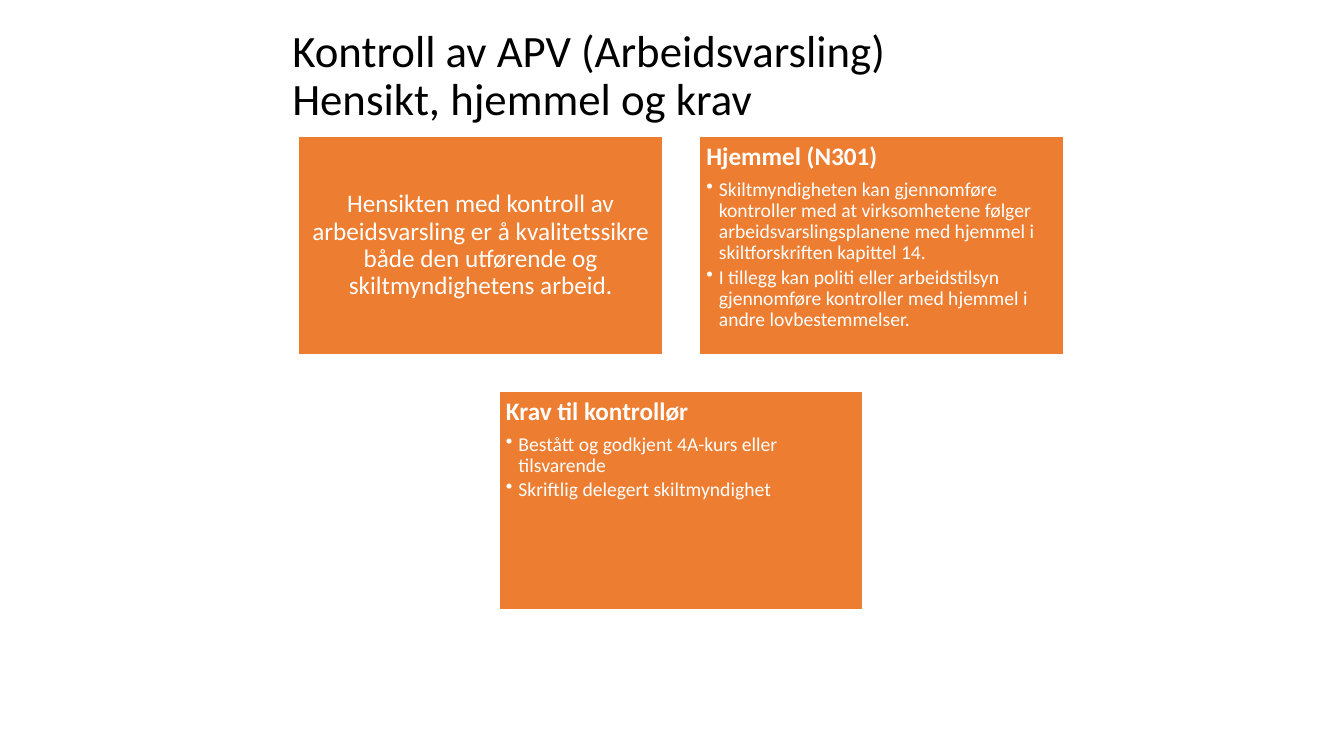
from lxml import etree
from pptx import Presentation
from pptx import util as u
from pptx.dml.color import RGBColor
from pptx.enum import shapes, text
from pptx.oxml import ns

COLORS = {"box": "ED7D31", "light": "FFFFFF", "title": "000000"}


class Deck:
    font = "Calibri"
    inset = 5

    def __init__(self, width, height):
        self.prs = Presentation()
        self.prs.slide_width, self.prs.slide_height = u.Pt(width), u.Pt(height)
        self.s = self.prs.slides.add_slide(self.prs.slide_layouts[5])

    def color(self, name):
        return RGBColor.from_string(COLORS[name])

    def run(self, p, words, size, color="light", bold=False):
        r = p.add_run()
        r.text = words
        r.font.name, r.font.size, r.font.bold = self.font, u.Pt(size), bold
        r.font.color.rgb = self.color(color)

    def paragraph(self, p, align=text.PP_ALIGN.LEFT, after=0):
        p.alignment = align
        p.line_spacing = 0.9
        p.space_before, p.space_after = u.Pt(0), u.Pt(after)

    def title(self, lines, x, y, w, h):
        sp = self.s.shapes.title
        sp.left, sp.top, sp.width, sp.height = map(u.Pt, (x, y, w, h))
        tf = sp.text_frame
        tf.word_wrap = True
        tf.auto_size = text.MSO_AUTO_SIZE.NONE
        tf.vertical_anchor = text.MSO_ANCHOR.MIDDLE
        p = tf.paragraphs[0]
        self.paragraph(p)
        for i, line in enumerate(lines):
            if i:
                p.add_line_break()
            self.run(p, line, 32, "title")

    def box(self, x, y, w, h, anchor):
        sp = self.s.shapes.add_shape(shapes.MSO_SHAPE.RECTANGLE, *map(u.Pt, (x, y, w, h)))
        sp.shadow.inherit = False
        sp.fill.solid()
        sp.fill.fore_color.rgb = self.color("box")
        sp.line.color.rgb = self.color("light")
        sp.line.width = u.Pt(1)
        tf = sp.text_frame
        tf.word_wrap = True
        tf.vertical_anchor = anchor
        tf.margin_left = tf.margin_right = tf.margin_top = tf.margin_bottom = u.Pt(self.inset)
        return tf

    def statement(self, words, *place):
        p = self.box(*place, text.MSO_ANCHOR.MIDDLE).paragraphs[0]
        self.paragraph(p, text.PP_ALIGN.CENTER, 6.3)
        self.run(p, words, 18)

    def bullet_box(self, heading, bullets, *place):
        tf = self.box(*place, text.MSO_ANCHOR.TOP)
        p = tf.paragraphs[0]
        self.paragraph(p, after=6.3)
        self.run(p, heading, 18, bold=True)
        for words in bullets:
            p = tf.add_paragraph()
            p.level = 1
            self.paragraph(p, after=2.1)
            pPr = p._p.get_or_add_pPr()
            pPr.set("marL", str(u.Pt(9)))
            pPr.set("indent", str(u.Pt(-9)))
            etree.SubElement(pPr, ns.qn("a:buChar")).set("char", "•")
            self.run(p, words, 14)


def main():
    deck = Deck(960, 540)

    # Title
    deck.title(["Kontroll av APV (Arbeidsvarsling)", "Hensikt, hjemmel og krav"],
               201.6, 36.7, 550.8, 36.7)

    # Box grid: two on top, one centred below
    left, top, w, h, gap = 213.2, 97.4, 260.2, 156.1, 26.1
    right = left + w + gap
    middle = (left + right) / 2
    lower = top + h + gap

    # Purpose
    deck.statement("Hensikten med kontroll av arbeidsvarsling er å kvalitetssikre "
                   "både den utførende og skiltmyndighetens arbeid.", left, top, w, h)

    # Legal basis
    deck.bullet_box("Hjemmel (N301)", [
        "Skiltmyndigheten kan gjennomføre kontroller med at virksomhetene følger "
        "arbeidsvarslingsplanene med hjemmel i skiltforskriften kapittel 14.",
        "I tillegg kan politi eller arbeidstilsyn gjennomføre kontroller med hjemmel i "
        "andre lovbestemmelser.",
    ], right, top, w, h)

    # Requirements
    deck.bullet_box("Krav til kontrollør", [
        "Bestått og godkjent 4A-kurs eller tilsvarende",
        "Skriftlig delegert skiltmyndighet",
    ], middle, lower, w, h)

    deck.prs.save("out.pptx")


if __name__ == "__main__":
    main()
